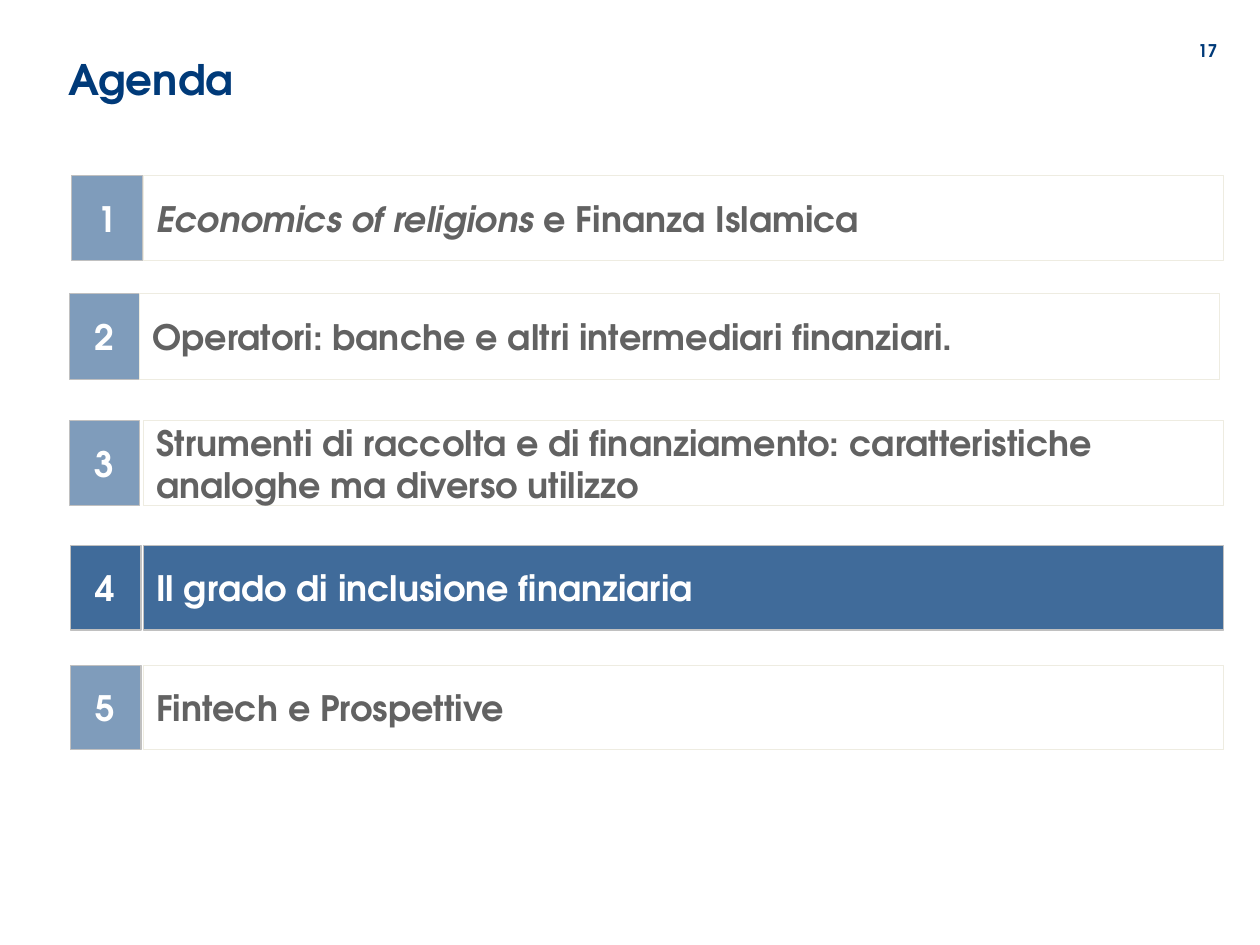
from lxml.etree import SubElement
from pptx import Presentation
from pptx.dml.color import RGBColor
from pptx.enum.shapes import MSO_SHAPE
from pptx.enum.text import MSO_ANCHOR, PP_ALIGN
from pptx.oxml.ns import qn
from pptx.util import Inches, Pt

FONT = "TeX Gyre Adventor"
NAVY = RGBColor(0x00, 0x3A, 0x79)
WHITE = RGBColor(0xFF, 0xFF, 0xFF)
GREY = RGBColor(0x62, 0x62, 0x62)
SILVER = RGBColor(0xC0, 0xC0, 0xC0)
IVORY = RGBColor(0xEE, 0xEC, 0xE1)

NUMBER_WIDTH = 0.56
TOPIC_WIDTH = 8.57
CURRENT_TOPIC = 4

AGENDA = [
    (0.57, 1.14, 1.39, 0.68, [("Economics of religions ", True), ("e Finanza Islamica", False)]),
    (0.55, 1.11, 2.33, 0.68, [("Operatori: banche e altri intermediari finanziari.", False)]),
    (0.55, 1.14, 3.34, 0.67, [("Strumenti di raccolta e di finanziamento: caratteristiche "
                               "analoghe ma diverso utilizzo", False)]),
    (0.56, 1.14, 4.33, 0.67, [("Il grado di inclusione finanziaria", False)]),
    (0.56, 1.14, 5.28, 0.67, [("Fintech e Prospettive", False)]),
]


def write(frame, runs, size, color, align):
    frame.word_wrap = True
    frame.vertical_anchor = MSO_ANCHOR.MIDDLE
    paragraph = frame.paragraphs[0]
    paragraph.alignment = align
    font = paragraph.font
    font.name = FONT
    font.size = Pt(size)
    font.bold = True
    font.color.rgb = color
    for text, italic in runs:
        run = paragraph.add_run()
        run.text = text
        if italic:
            run.font.italic = True
    return paragraph


def set_opacity(shape, percent):
    color = shape.fill._xPr.find(qn("a:solidFill"))[0]
    SubElement(color, qn("a:alpha")).set("val", str(percent * 1000))


def add_box(slide, left, top, width, height, fill, line, opacity=100):
    box = slide.shapes.add_shape(MSO_SHAPE.RECTANGLE, Inches(left), Inches(top),
                                 Inches(width), Inches(height))
    box.shadow.inherit = False
    box.fill.solid()
    box.fill.fore_color.rgb = fill
    if opacity < 100:
        set_opacity(box, opacity)
    box.line.color.rgb = line
    box.line.width = Pt(0.75)
    return box


def add_agenda_row(slide, number, number_left, topic_left, top, height, topic_runs):
    current = number == CURRENT_TOPIC
    opacity = 75 if current else 50
    number_box = add_box(slide, number_left, top, NUMBER_WIDTH, height, NAVY, SILVER, opacity)
    write(number_box.text_frame, [(str(number), False)], 20, WHITE, PP_ALIGN.CENTER)
    if current:
        topic_box = add_box(slide, topic_left, top, TOPIC_WIDTH, height, NAVY, SILVER, opacity)
    else:
        topic_box = add_box(slide, topic_left, top, TOPIC_WIDTH, height, WHITE, IVORY)
    write(topic_box.text_frame, topic_runs, 20, WHITE if current else GREY, PP_ALIGN.LEFT)


def add_title(slide, text):
    title = slide.shapes.title
    title.left, title.top = Inches(0.44), Inches(0.4)
    title.width, title.height = Inches(8.57), Inches(0.5)
    paragraph = write(title.text_frame, [(text, False)], 24, NAVY, PP_ALIGN.LEFT)
    paragraph.line_spacing = 0.9


def add_page_number(slide, text):
    page_number = slide.shapes.add_textbox(Inches(9.36), Inches(0.2), Inches(0.45), Inches(0.4))
    write(page_number.text_frame, [(text, False)], 10, NAVY, PP_ALIGN.CENTER)


def main():
    presentation = Presentation()
    presentation.slide_width = Inches(10)
    presentation.slide_height = Inches(7.5)
    slide = presentation.slides.add_slide(presentation.slide_layouts[5])
    add_title(slide, "Agenda")
    for number, row in enumerate(AGENDA, start=1):
        add_agenda_row(slide, number, *row)
    add_page_number(slide, "17")
    presentation.save("out.pptx")


if __name__ == "__main__":
    main()
